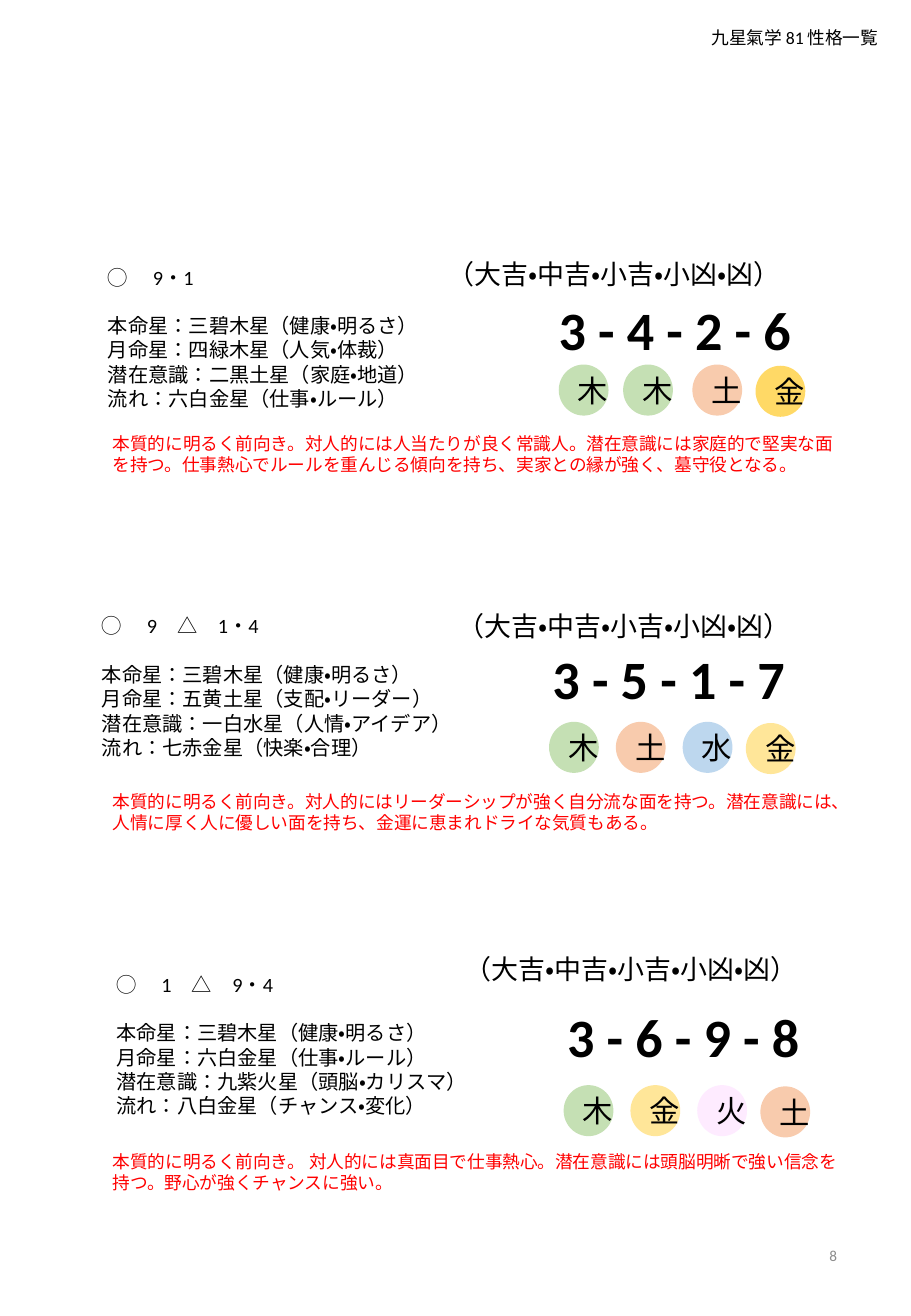
import pptx
import pptx.util
import pptx.dml.color
import pptx.enum.dml
import pptx.enum.lang
import pptx.enum.shapes
import pptx.enum.text
from dataclasses import dataclass

Inches = pptx.util.Inches
Pt = pptx.util.Pt
Align = pptx.enum.text.PP_ALIGN
Anchor = pptx.enum.text.MSO_ANCHOR


@dataclass(frozen=True)
class Theme:
    font: str = "Calibri"
    ink: str = "000000"
    accent: str = "FF0000"
    muted: str = "8C8C8C"
    wood: str = "C5E0B4"
    earth: str = "F8CBAD"
    water: str = "BDD7EE"
    fire: str = "FEEBFF"
    metal: str = "FFE699"
    deep_metal: str = "FFD966"
    number_size: float = 32
    element_size: float = 18
    verdict_size: float = 16
    profile_size: float = 12
    small_size: float = 10.5
    footer_size: float = 9


@dataclass(frozen=True)
class Reading:
    box: tuple  # left, top, width of the profile
    heading: str
    stars: tuple
    numbers: str
    elements: tuple  # sign and fill
    element_shifts: tuple  # from the left of the numbers
    element_top: float
    verdict_shift: tuple
    summary: str
    summary_top: float


THEME = Theme()
VERDICT = "（大吉・中吉・小吉・小凶・凶）"
SUMMARY_LEFT = 0.83
CIRCLE = (0.41, 0.42)

READINGS = (
    Reading(
        (0.79, 2.13, 2.98), "◯　 9・1　",
        ("本命星：三碧木星（健康・明るさ）", "月命星：四緑木星（人気・体裁）",
         "潜在意識：二黒土星（家庭・地道）", "流れ：六白金星（仕事・ルール）"),
        "3 - 4 - 2 - 6",
        (("木", THEME.wood), ("木", THEME.wood), ("土", THEME.earth), ("金", THEME.deep_metal)),
        (0.1, 0.63, 1.2, 1.72), 0.87, (2.8, -0.06),
        "本質的に明るく前向き。対人的には人当たりが良く常識人。潜在意識には家庭的で堅実な面を持つ。"
        "仕事熱心でルールを重んじる傾向を持ち、実家との縁が強く、墓守役となる。", 1.38),
    Reading(
        (0.74, 5, 3.32), "◯　 9　△　1・4　",
        ("本命星：三碧木星（健康・明るさ）", "月命星：五黄土星（支配・リーダー）",
         "潜在意識：一白水星（人情・アイデア）", "流れ：七赤金星（快楽・合理）"),
        "3 - 5 - 1 - 7",
        (("木", THEME.wood), ("土", THEME.earth), ("水", THEME.water), ("金", THEME.metal)),
        (0.07, 0.62, 1.17, 1.69), 0.94, (2.93, -0.03),
        "本質的に明るく前向き。対人的にはリーダーシップが強く自分流な面を持つ。潜在意識には、"
        "人情に厚く人に優しい面を持ち、金運に恵まれドライな気質もある。", 1.46),
    Reading(
        (0.86, 7.95, 3.32), "◯　 1　△　9・4　",
        ("本命星：三碧木星（健康・明るさ）", "月命星：六白金星（仕事・ルール）",
         "潜在意識：九紫火星（頭脳・カリスマ）", "流れ：八白金星（チャンス・変化）"),
        "3 - 6 - 9 - 8",
        (("木", THEME.wood), ("金", THEME.metal), ("火", THEME.fire), ("土", THEME.earth)),
        (0.07, 0.62, 1.17, 1.69), 0.98, (2.87, -0.16),
        "本質的に明るく前向き。 対人的には真面目で仕事熱心。潜在意識には頭脳明晰で強い信念を持つ。"
        "野心が強くチャンスに強い。", 1.47),
)


def fill_text(shape, text, size, color=THEME.ink, bold=False, align=Align.LEFT, anchor=Anchor.TOP):
    frame = shape.text_frame
    frame.text = text
    frame.word_wrap = True
    frame.vertical_anchor = anchor
    for para in frame.paragraphs:
        para.alignment = align
        for span in para.runs:
            span.font.name = THEME.font
            span.font.size = Pt(size)
            span.font.bold = bold
            span.font.color.rgb = pptx.dml.color.RGBColor.from_string(color)
            span.font.language_id = pptx.enum.lang.MSO_LANGUAGE_ID.JAPANESE
    return frame


def add_text(page, box, text, size, **style):
    shape = page.shapes.add_textbox(*map(Inches, box))
    return fill_text(shape, text, size, **style)


def add_element(page, box, sign, color):
    circle = page.shapes.add_shape(pptx.enum.shapes.MSO_SHAPE.OVAL, *map(Inches, box))
    circle.shadow.inherit = False
    circle.fill.solid()
    circle.fill.fore_color.rgb = pptx.dml.color.RGBColor.from_string(color)
    circle.line.fill.background()
    fill_text(circle, sign, THEME.element_size, align=Align.CENTER, anchor=Anchor.MIDDLE)


def add_reading(page, reading):
    left, top, width = reading.box

    # Profile: heading, gap of one line, four stars
    profile = add_text(page, (left, top, width, 1.31),
                       "\n".join((reading.heading, *reading.stars)), THEME.profile_size)
    profile.paragraphs[0].space_after = Pt(14.4)

    # Verdict and number sequence
    across, down = reading.verdict_shift
    add_text(page, (left + across, top + down, 3.57, 0.37), VERDICT, THEME.verdict_size)
    numbers_left = left + 3.71
    add_text(page, (numbers_left, top + 0.26, 2.52, 0.64), reading.numbers,
             THEME.number_size, bold=True)

    # Element circles, the last one slightly lower
    for index, (sign, color) in enumerate(reading.elements):
        drop = 0.01 if index == 3 else 0
        add_element(page, (numbers_left + reading.element_shifts[index],
                           top + reading.element_top + drop, *CIRCLE), sign, color)

    # Summary
    add_text(page, (SUMMARY_LEFT, top + reading.summary_top, 6.26, 0.45), reading.summary,
             THEME.small_size, color=THEME.accent)


def main():
    deck = pptx.Presentation()
    deck.slide_width, deck.slide_height = Inches(7.5), Inches(10.83)
    page = deck.slides.add_slide(deck.slide_layouts[6])

    # Header and page number
    add_text(page, (5.76, 0.17, 1.6, 0.28), "九星氣学 81 性格一覧", THEME.small_size)
    add_text(page, (5.3, 10.04, 1.69, 0.58), "8", THEME.footer_size, color=THEME.muted,
             align=Align.RIGHT, anchor=Anchor.MIDDLE)

    for reading in READINGS:
        add_reading(page, reading)

    deck.save("out.pptx")


if __name__ == "__main__":
    main()
